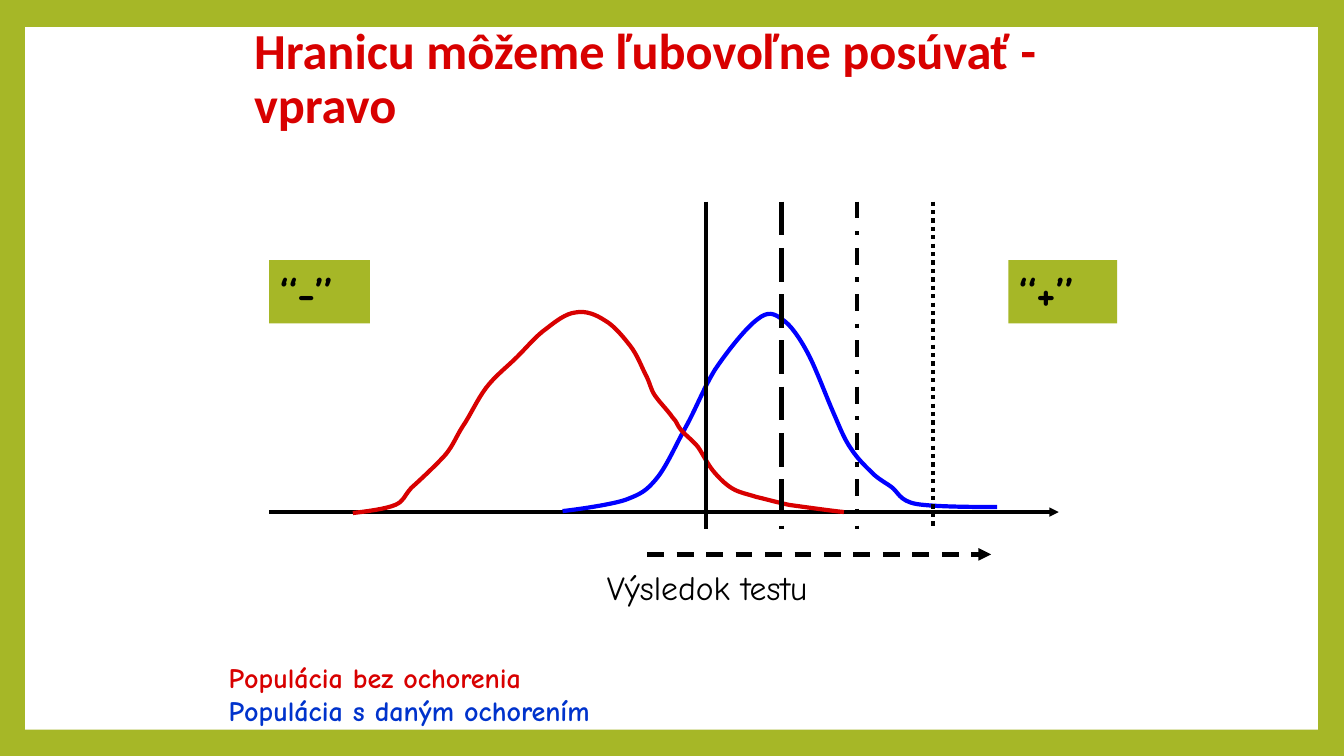
import dataclasses
import typing

import lxml.etree
import pptx
import pptx.dml.color
import pptx.enum.dml
import pptx.enum.shapes
import pptx.enum.text
import pptx.oxml.ns
import pptx.util

Inches = pptx.util.Inches
Pt = pptx.util.Pt
RGBColor = pptx.dml.color.RGBColor
Dash = pptx.enum.dml.MSO_LINE
Fit = pptx.enum.text.MSO_AUTO_SIZE
qn = pptx.oxml.ns.qn
Point = tuple[float, float]

GREEN = RGBColor(0xA6, 0xB7, 0x27)
WHITE = RGBColor(0xFF, 0xFF, 0xFF)
BLACK = RGBColor(0, 0, 0)
RED = RGBColor(0xD8, 0, 0)
BLUE = RGBColor(0, 0, 0xFF)
NAVY = RGBColor(0, 0x33, 0xCC)


@dataclasses.dataclass
class Rule:
    start: Point
    end: Point
    width: float = 3
    dash: typing.Optional[Dash] = None
    arrow: bool = False


@dataclasses.dataclass
class Label:
    text: str
    left: float
    top: float
    width: float
    height: float
    size: float
    color: RGBColor = BLACK
    bold: bool = True
    fill: typing.Optional[RGBColor] = None


@dataclasses.dataclass
class Curve:
    color: RGBColor
    start: Point
    bends: list[tuple[float, ...]]


SICK = Curve(BLUE, (5.58, 5.07), [
    (5.68, 5.06, 6.05, 5.01, 6.2, 4.96),
    (6.36, 4.9, 6.41, 4.87, 6.51, 4.75),
    (6.61, 4.63, 6.7, 4.42, 6.8, 4.24),
    (6.9, 4.06, 6.98, 3.85, 7.09, 3.67),
    (7.21, 3.49, 7.4, 3.25, 7.51, 3.17),
    (7.62, 3.08, 7.68, 3.11, 7.76, 3.17),
    (7.84, 3.22, 7.93, 3.35, 8.01, 3.5),
    (8.09, 3.65, 8.19, 3.92, 8.26, 4.08),
    (8.33, 4.24, 8.37, 4.35, 8.44, 4.45),
    (8.51, 4.56, 8.6, 4.64, 8.67, 4.71),
    (8.74, 4.77, 8.77, 4.78, 8.84, 4.83),
    (8.91, 4.88, 8.92, 4.97, 9.09, 5),
    (9.27, 5.03, 9.72, 5.03, 9.89, 5.03),
])
WELL = Curve(RED, (3.5, 5.09), [
    (3.66, 5.07, 3.82, 5.05, 3.92, 5.01),
    (4.01, 4.97, 4, 4.93, 4.08, 4.84),
    (4.17, 4.76, 4.33, 4.61, 4.42, 4.51),
    (4.5, 4.41, 4.52, 4.34, 4.59, 4.23),
    (4.66, 4.13, 4.73, 3.97, 4.82, 3.85),
    (4.91, 3.73, 5.03, 3.64, 5.13, 3.54),
    (5.23, 3.44, 5.32, 3.33, 5.42, 3.26),
    (5.51, 3.19, 5.61, 3.11, 5.71, 3.1),
    (5.81, 3.08, 5.91, 3.12, 6, 3.18),
    (6.09, 3.23, 6.18, 3.34, 6.25, 3.43),
    (6.32, 3.52, 6.36, 3.63, 6.4, 3.71),
    (6.45, 3.8, 6.45, 3.86, 6.5, 3.93),
    (6.55, 4, 6.63, 4.08, 6.67, 4.14),
    (6.72, 4.19, 6.71, 4.21, 6.75, 4.26),
    (6.79, 4.31, 6.86, 4.36, 6.92, 4.43),
    (6.97, 4.5, 7.02, 4.61, 7.08, 4.68),
    (7.14, 4.75, 7.2, 4.81, 7.27, 4.85),
    (7.34, 4.89, 7.41, 4.9, 7.5, 4.93),
    (7.59, 4.95, 7.69, 4.98, 7.83, 5.01),
    (7.98, 5.03, 8.26, 5.07, 8.37, 5.08),
])
AXIS = Rule((2.67, 5.08), (10.5, 5.08), 2.25, arrow=True)
SHIFT = Rule((6.42, 5.5), (9.83, 5.5), dash=Dash.DASH, arrow=True)
DASHES = [None, Dash.LONG_DASH, Dash.DASH_DOT, Dash.ROUND_DOT]
CUTS = [Rule((7 + 0.75 * i, 2), (7 + 0.75 * i, 5.25), dash=dash)
        for i, dash in enumerate(DASHES)]
LABELS = [
    Label("Výsledok testu", 5.92, 5.58, 2.75, 0.5, 24, bold=False),
    Label("‘‘-’’", 2.67, 2.58, 1, 0.63, 32, fill=GREEN),
    Label("‘‘+’’", 10, 2.58, 1.08, 0.63, 32, fill=GREEN),
    Label("Populácia s daným ochorením", 2.17, 6.83, 4.42, 0.43, 20, NAVY),
    Label("Populácia bez ochorenia", 2.17, 6.5, 3.71, 0.43, 20, RED),
]


def draw_rule(slide: typing.Any, rule: Rule) -> None:
    ends = [Inches(v) for v in rule.start + rule.end]
    line = slide.shapes.add_connector(
        pptx.enum.shapes.MSO_CONNECTOR.STRAIGHT, *ends)
    line.line.color.rgb = BLACK
    line.line.width = Pt(rule.width)
    if rule.dash is not None:
        line.line.dash_style = rule.dash
    props = line._element.spPr
    if rule.arrow:
        lxml.etree.SubElement(props.find(qn("a:ln")), qn("a:tailEnd"),
                              type="triangle")
    lxml.etree.SubElement(props, qn("a:effectLst"))


def bend_lines(shape: typing.Any) -> None:
    lines = list(shape._element.iter(qn("a:lnTo")))
    for i in range(0, len(lines), 3):
        trio = lines[i:i + 3]
        bend = lxml.etree.Element(qn("a:cubicBezTo"))
        trio[0].addprevious(bend)
        for line in trio:
            bend.append(line[0])
            line.getparent().remove(line)


def draw_curve(slide: typing.Any, curve: Curve) -> None:
    x, y = curve.start
    points = [(Inches(bend[i]), Inches(bend[i + 1]))
              for bend in curve.bends for i in (0, 2, 4)]
    pen = slide.shapes.build_freeform(Inches(x), Inches(y))
    pen.add_line_segments(points, close=False)
    shape = pen.convert_to_shape()
    bend_lines(shape)
    shape.shadow.inherit = False
    shape.fill.background()
    shape.line.color.rgb = curve.color
    shape.line.width = Pt(3)


def draw_label(slide: typing.Any, label: Label) -> None:
    box = slide.shapes.add_textbox(
        Inches(label.left), Inches(label.top),
        Inches(label.width), Inches(label.height))
    if label.fill is not None:
        box.fill.solid()
        box.fill.fore_color.rgb = label.fill
    frame = box.text_frame
    frame.word_wrap = True
    frame.auto_size = Fit.SHAPE_TO_FIT_TEXT
    frame.text = label.text
    style(frame.paragraphs[0], "Comic Neue", label.size, label.color,
          label.bold)


def style(para: typing.Any, name: str, size: float, color: RGBColor,
          bold: bool) -> None:
    para.font.name = name
    para.font.size = Pt(size)
    para.font.color.rgb = color
    para.font.bold = bold


def draw_panel(slide: typing.Any) -> None:
    slide.background.fill.solid()
    slide.background.fill.fore_color.rgb = GREEN
    panel = slide.shapes.add_shape(
        pptx.enum.shapes.MSO_SHAPE.RECTANGLE,
        Inches(0.25), Inches(0.27), Inches(12.82), Inches(6.97))
    panel.shadow.inherit = False
    panel.fill.solid()
    panel.fill.fore_color.rgb = WHITE
    panel.line.fill.background()


def draw_title(slide: typing.Any) -> None:
    title = slide.shapes.title
    title.left, title.top = Inches(2.42), Inches(0.17)
    title.width, title.height = Inches(8.5), Inches(1.25)
    frame = title.text_frame
    frame.text = "Hranicu môžeme ľubovoľne posúvať - vpravo"
    frame.word_wrap = True
    frame.auto_size = Fit.NONE
    frame.vertical_anchor = pptx.enum.text.MSO_ANCHOR.MIDDLE
    para = frame.paragraphs[0]
    para.alignment = pptx.enum.text.PP_ALIGN.LEFT
    para.line_spacing = 0.9
    style(para, "Calibri", 36, RED, True)
    slide.shapes._spTree.append(title._element)


def main() -> None:
    deck = pptx.Presentation()
    deck.slide_width, deck.slide_height = Inches(13.33), Inches(7.5)
    slide = deck.slides.add_slide(deck.slide_layouts[5])
    draw_panel(slide)
    draw_rule(slide, AXIS)
    for curve in (SICK, WELL):
        draw_curve(slide, curve)
    for rule in CUTS + [SHIFT]:
        draw_rule(slide, rule)
    for label in LABELS:
        draw_label(slide, label)
    draw_title(slide)
    deck.save("out.pptx")


if __name__ == "__main__":
    main()
